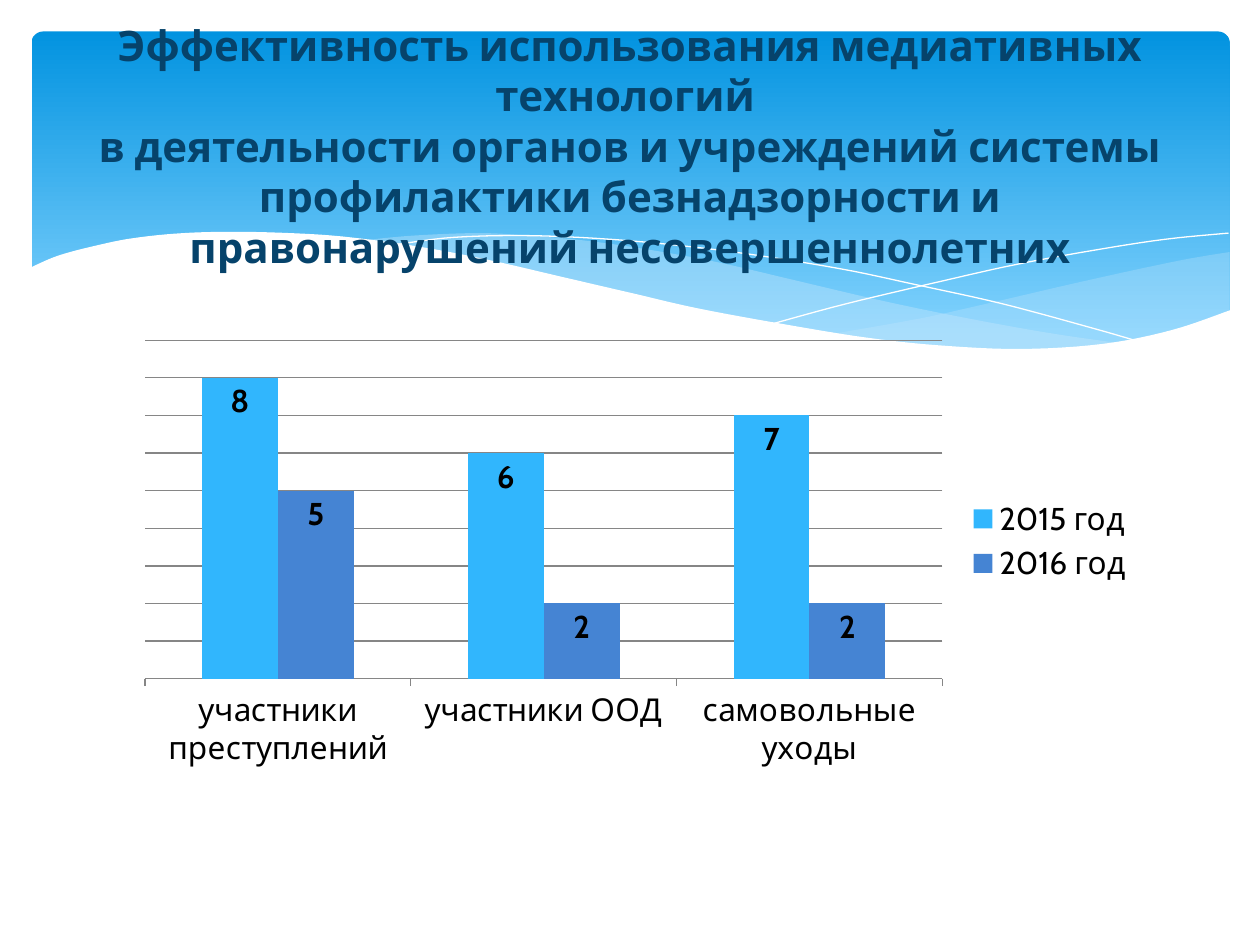
import pptx
import pptx.chart.data
import pptx.dml.color
import pptx.enum.chart
import pptx.enum.dml
import pptx.enum.shapes
import pptx.enum.text
import pptx.oxml
import pptx.oxml.ns
import pptx.util
from pptx.util import Inches

THEME = {
    "font": "Cabin", "title_size": 24, "chart_size": 18,
    "title": "06436B", "text": "000000", "grid": "868686",
    "white": "FFFFFF", "mist": "C6E7FC",
    "band": [(0, "0293E0"), (0.9, "83D3FE")],
    "series": ["31B6FD", "4584D3"],
}

TITLE_LINES = [
    "Эффективность использования медиативных технологий ",
    "в деятельности органов и учреждений системы профилактики "
    "безнадзорности и правонарушений несовершеннолетних",
]
CATEGORIES = ["участники преступлений", "участники ООД", "самовольные уходы"]
SERIES = {"2015 год": [8, 6, 7], "2016 год": [5, 2, 2]}

TITLE_BOX = (0.5, 0.37, 9, 1.57)
BAND_BOX = (0.25, 0.25, 9.51, 2.7)
CHART_BOX = (0.75, 2.41, 8.35, 3.77)
PLOT = {"x": 0.048, "y": 0.077, "w": 0.758, "h": 0.713}

# Each outline is a list of smooth curves, joined to each other by straight edges.
RIGHT_WAVE = [
    [(9.76, 2), (9.35, 2.07), (8.61, 2.23), (7.79, 2.42), (7.29, 2.53), (6.61, 2.65)],
    [(6.61, 2.65), (7.05, 2.71), (7.57, 2.76), (8.14, 2.78), (8.63, 2.75),
     (9.13, 2.67), (9.49, 2.57), (9.76, 2.47)],
]
MIDDLE_WAVE = [
    [(8.93, 2.73), (8.37, 2.65), (7.75, 2.54), (7.06, 2.4), (6.29, 2.22), (5.69, 2.08),
     (5.14, 1.98), (4.65, 1.91), (4.2, 1.87), (3.8, 1.85), (3.28, 1.87), (2.86, 1.91)],
    [(2.86, 1.91), (3.42, 1.99), (4.04, 2.11), (4.49, 2.22), (5.3, 2.4), (6.01, 2.55),
     (6.65, 2.66), (7.22, 2.74), (7.73, 2.77), (8.28, 2.78), (8.93, 2.73)],
]
FALLING_LINE = [[(3.09, 1.95), (3.53, 1.89), (4.01, 1.87), (4.5, 1.88), (5.1, 1.92),
                 (5.82, 2), (6.65, 2.13), (7.27, 2.26), (7.95, 2.41), (8.69, 2.61),
                 (9.07, 2.72)]]
RISING_LINE = [[(6.13, 2.57), (6.72, 2.41), (7.48, 2.23), (8.06, 2.1), (8.66, 1.99),
                (9.24, 1.9), (9.75, 1.85)]]
WHITE_WAVE = [
    [(9.77, 2.46), (9.3, 2.62), (8.75, 2.73), (8.09, 2.77), (7.44, 2.74), (6.88, 2.68),
     (6.26, 2.58), (5.55, 2.45), (5.03, 2.33), (4.47, 2.2), (3.91, 2.07), (3.4, 1.97),
     (2.92, 1.9), (2.5, 1.86), (1.93, 1.84), (1.46, 1.85), (1.06, 1.89), (0.76, 1.95),
     (0.46, 2.03), (0.23, 2.13)],
    [(0.23, 3.29), (9.77, 3.29)],
]


def color(value):
    return pptx.dml.color.RGBColor.from_string(value)


def inches(values):
    return [Inches(value) for value in values]


def smooth(knots, steps=6):
    """Return points along a Catmull-Rom curve through the knots."""
    padded = [knots[0], *knots, knots[-1]]
    points = [knots[0]]
    for a, b, c, d in zip(padded, padded[1:], padded[2:], padded[3:]):
        for step in range(1, steps + 1):
            t = step / steps
            points.append(tuple(
                0.5 * (2 * q + (r - p) * t + (2 * p - 5 * q + 4 * r - s) * t ** 2
                       + (3 * q - p - 3 * r + s) * t ** 3)
                for p, q, r, s in zip(a, b, c, d)))
    return points


def add_outline(page, curves, fill=None, opacity=100):
    """Draw a filled wave, or an open white hairline when there is no fill."""
    points = [inches(point) for curve in curves for point in smooth(curve)]
    builder = page.shapes.build_freeform(*points[0])
    builder.add_line_segments(points[1:], close=fill is not None)
    wave = builder.convert_to_shape()
    wave.shadow.inherit = False
    if fill is None:
        wave.fill.background()
        wave.line.color.rgb = color(THEME["white"])
        wave.line.width = 0
        return
    wave.line.fill.background()
    wave.fill.solid()
    wave.fill.fore_color.rgb = color(fill)
    if opacity < 100:
        tone = wave.element.find(".//" + pptx.oxml.ns.qn("a:srgbClr"))
        tone.append(pptx.oxml.parse_xml(
            f'<a:alpha {pptx.oxml.ns.nsdecls("a")} val="{opacity * 1000}"/>'))


def add_band(page):
    band = page.shapes.add_shape(
        pptx.enum.shapes.MSO_SHAPE.ROUNDED_RECTANGLE, *inches(BAND_BOX))
    band.adjustments[0] = 0.034
    band.shadow.inherit = False
    band.line.fill.background()
    band.fill.gradient()
    band.fill.gradient_angle = 270
    for stop, (position, tone) in zip(band.fill.gradient_stops, THEME["band"]):
        stop.position = position
        stop.color.rgb = color(tone)


def add_chart(page):
    data = pptx.chart.data.CategoryChartData()
    data.categories = CATEGORIES
    for name, values in SERIES.items():
        data.add_series(name, values)
    kinds = pptx.enum.chart
    chart = page.shapes.add_chart(
        kinds.XL_CHART_TYPE.COLUMN_CLUSTERED, *inches(CHART_BOX), data).chart
    chart.has_title = False
    chart.font.name = THEME["font"]
    chart.font.size = pptx.util.Pt(THEME["chart_size"])
    chart.font.color.rgb = color(THEME["text"])
    chart.has_legend = True
    chart.legend.position = kinds.XL_LEGEND_POSITION.RIGHT
    chart.legend.include_in_layout = False

    scale = chart.value_axis
    scale.minimum_scale, scale.maximum_scale, scale.major_unit = 0, 9, 1
    scale.visible = False
    scale.has_major_gridlines = True
    chart.category_axis.major_tick_mark = kinds.XL_TICK_MARK.OUTSIDE
    for line in (scale.major_gridlines.format.line, chart.category_axis.format.line):
        line.color.rgb = color(THEME["grid"])
        line.width = pptx.util.Pt(0.75)

    plot = chart.plots[0]
    plot.vary_by_categories = False
    plot.gap_width, plot.overlap = 150, 0
    for series, tone in zip(plot.series, THEME["series"]):
        series.format.fill.solid()
        series.format.fill.fore_color.rgb = color(tone)
        labels = series.data_labels
        labels.show_value = True
        labels.position = kinds.XL_LABEL_POSITION.INSIDE_END
        labels.font.bold = True
    place_plot(chart)


def place_plot(chart):
    area = chart.element.find(".//" + pptx.oxml.ns.qn("c:plotArea"))
    for old in area.findall(pptx.oxml.ns.qn("c:layout")):
        area.remove(old)
    modes = "".join(f'<c:{side}Mode val="edge"/>' for side in "xy")
    sizes = "".join(f'<c:{side} val="{value}"/>' for side, value in PLOT.items())
    area.insert(0, pptx.oxml.parse_xml(
        f'<c:layout {pptx.oxml.ns.nsdecls("c")}><c:manualLayout>'
        f'<c:layoutTarget val="inner"/>{modes}{sizes}</c:manualLayout></c:layout>'))


def fill_title(page):
    title = page.shapes.title
    title.left, title.top, title.width, title.height = inches(TITLE_BOX)
    frame = title.text_frame
    frame.word_wrap = True
    frame.auto_size = pptx.enum.text.MSO_AUTO_SIZE.NONE
    frame.vertical_anchor = pptx.enum.text.MSO_ANCHOR.MIDDLE
    para = frame.paragraphs[0]
    para.alignment = pptx.enum.text.PP_ALIGN.CENTER
    for index, line in enumerate(TITLE_LINES):
        if index:
            para.add_line_break()
        span = para.add_run()
        span.text = line
        span.font.name = THEME["font"]
        span.font.size = pptx.util.Pt(THEME["title_size"])
        span.font.bold = True
        span.font.color.rgb = color(THEME["title"])
    title.element.getparent().append(title.element)  # bring to front


def main():
    deck = pptx.Presentation()
    deck.slide_width, deck.slide_height = inches((10, 7.5))
    page = deck.slides.add_slide(deck.slide_layouts[5])
    add_band(page)
    add_outline(page, RIGHT_WAVE, THEME["mist"], 29)
    add_outline(page, MIDDLE_WAVE, THEME["mist"], 40)
    add_outline(page, FALLING_LINE)
    add_outline(page, RISING_LINE)
    add_outline(page, WHITE_WAVE, THEME["white"])
    add_chart(page)
    fill_title(page)
    deck.save("out.pptx")


if __name__ == "__main__":
    main()
